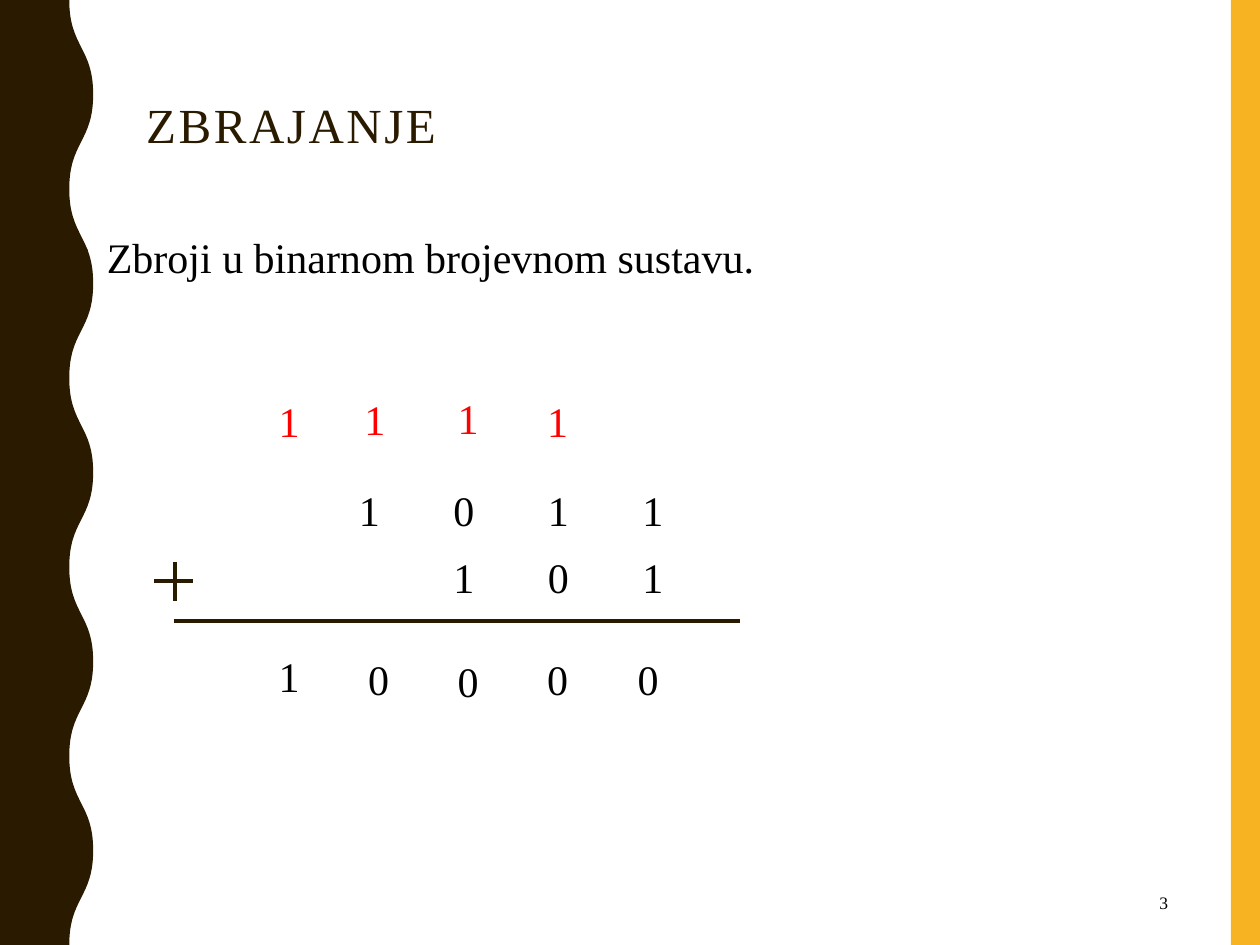
from lxml import etree
from pptx import Presentation
from pptx import util as u
from pptx.dml.color import RGBColor
from pptx.enum import shapes, text
from pptx.oxml.ns import qn

FONT = "Times New Roman"
BROWN, GOLD, RED, BLACK = "2A1A00", "F8B323", "FF0000", "000000"
# Each digit: text, left, top
CARRIES = (("1", 2.06, 3.06), ("1", 2.74, 3.05), ("1", 3.48, 3.04),
           ("1", 4.19, 3.06))
SUM = (("1", 2.06, 5.09), ("0", 2.77, 5.11), ("0", 3.48, 5.13),
       ("0", 4.19, 5.11), ("0", 4.91, 5.11))


def paint(color_format, color):
    color_format.rgb = RGBColor.from_string(color)


def fill_shape(shape, color):
    shape.shadow.inherit = False
    shape.fill.solid()
    paint(shape.fill.fore_color, color)
    shape.line.fill.background()


def write(para, content, size=24, color=BLACK, align=text.PP_ALIGN.LEFT,
          line_spacing=None, before=0, tracking=None):
    """Add one formatted run; tracking is letter spacing in points."""
    para.alignment = align
    para.space_before = u.Pt(before)
    if line_spacing:
        para.line_spacing = line_spacing
    span = para.add_run()
    span.text = content
    span.font.name = FONT
    span.font.size = u.Pt(size)
    paint(span.font.color, color)
    if tracking:
        span._r.get_or_add_rPr().set("spc", str(int(tracking * 100)))


def add_box(page, left, top, width, height, anchor=text.MSO_ANCHOR.MIDDLE):
    box = page.shapes.add_textbox(*map(u.Inches, (left, top, width, height)))
    frame = box.text_frame
    frame.word_wrap = True
    frame.vertical_anchor = anchor
    return frame


def bend(segment, points):
    """Turn a straight outline segment into a Bezier curve."""
    segment.tag = qn("a:cubicBezTo")
    for old in list(segment):
        segment.remove(old)
    for x, y in points:
        etree.SubElement(segment, qn("a:pt"),
                         x=str(u.Inches(x)), y=str(u.Inches(y)))


def add_wave(page):
    """Draw the dark left band, whose right edge is a wave of 1.5 inch period."""
    half = 0.75
    edge = [(0.74 if index % 2 else 0.55, index * half) for index in range(11)]
    outline = edge + [(0, 7.5), (0, 0)]
    vertices = [(u.Inches(x), u.Inches(y)) for x, y in outline]
    builder = page.shapes.build_freeform(*vertices[0])
    builder.add_line_segments(vertices[1:], close=True)
    wave = builder.convert_to_shape()
    segments = list(wave._element.iter(qn("a:lnTo")))
    for segment, (x1, y1), (x2, y2) in zip(segments, edge, edge[1:]):
        middle = (y1 + y2) / 2
        bend(segment, ((x1, middle), (x2, middle), (x2, y2)))
    fill_shape(wave, BROWN)


def add_line(group, x1, y1, x2, y2):
    line = group.shapes.add_connector(
        shapes.MSO_CONNECTOR.STRAIGHT, *map(u.Inches, (x1, y1, x2, y2)))
    paint(line.line.color, BROWN)
    line.line.width = u.Pt(2.25)
    etree.SubElement(line._element.spPr, qn("a:effectLst"))


def set_bullet(para):
    props = para._p.get_or_add_pPr()
    props.set("marL", str(u.Inches(0.25)))
    props.set("indent", str(u.Inches(-0.25)))
    color = etree.SubElement(props, qn("a:buClr"))
    etree.SubElement(color, qn("a:srgbClr"), val=BROWN)
    etree.SubElement(props, qn("a:buChar"), char="•")


def set_tabs(para, stops):
    tabs = etree.SubElement(para._p.get_or_add_pPr(), qn("a:tabLst"))
    for stop in stops:
        etree.SubElement(tabs, qn("a:tab"), pos=str(u.Inches(stop)), algn="l")


def add_title(page):
    title = page.shapes.title
    title.left, title.top = u.Inches(1.06), u.Inches(0.75)
    title.width, title.height = u.Inches(3.32), u.Inches(0.61)
    title.text_frame.vertical_anchor = text.MSO_ANCHOR.MIDDLE
    title.text_frame.margin_bottom = u.Inches(0.13)
    write(title.text_frame.paragraphs[0], "ZBRAJANJE", size=28, color=BROWN,
          line_spacing=0.9, tracking=1.5)


def add_task(page):
    frame = add_box(page, 0.5, 1.75, 9, 5.47, text.MSO_ANCHOR.TOP)
    intro = frame.paragraphs[0]
    write(intro, "Zbroji u binarnom brojevnom sustavu.",
          line_spacing=1.1, before=7)
    set_bullet(intro)
    for addend, before in (("\t1\t0\t1\t1", 113), ("\t\t1\t0\t1", 6.5)):
        para = frame.add_paragraph()
        write(para, addend, line_spacing=1.1, before=before)
        set_tabs(para, (2.25, 3, 3.75, 4.5))


def add_digits(page, digits, color):
    for digit, left, top in digits:
        frame = add_box(page, left, top, 0.47, 0.55)
        write(frame.paragraphs[0], digit, color=color,
              align=text.PP_ALIGN.CENTER)


def main():
    deck = Presentation()
    deck.slide_width, deck.slide_height = u.Inches(10), u.Inches(7.5)
    page = deck.slides.add_slide(deck.slide_layouts[5])

    band = page.shapes.add_shape(
        shapes.MSO_SHAPE.RECTANGLE, *map(u.Inches, (9.77, 0, 0.23, 7.5)))
    fill_shape(band, GOLD)
    add_wave(page)
    add_title(page)
    add_task(page)
    number = add_box(page, 7.06, 6.97, 2.31, 0.38)
    write(number.paragraphs[0], "3", size=10, align=text.PP_ALIGN.RIGHT)

    sum_marks = page.shapes.add_group_shape()
    add_line(sum_marks, 1.38, 4.93, 5.87, 4.93)
    add_line(sum_marks, 1.53, 4.61, 1.22, 4.61)
    add_line(sum_marks, 1.39, 4.46, 1.39, 4.77)

    add_digits(page, CARRIES, RED)
    add_digits(page, SUM, BLACK)
    deck.save("out.pptx")


if __name__ == "__main__":
    main()
